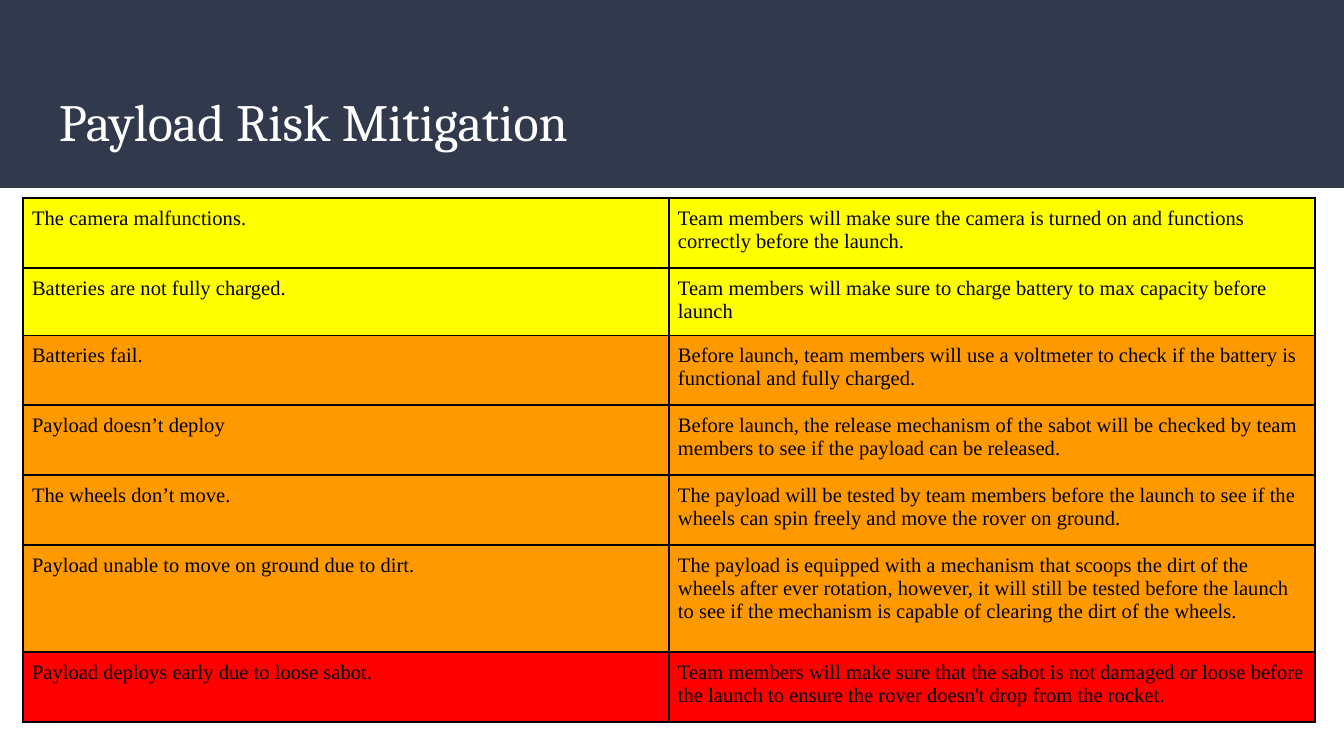
from dataclasses import dataclass

from lxml.etree import SubElement
from pptx import Presentation
from pptx.dml.color import RGBColor
from pptx.enum.shapes import MSO_SHAPE
from pptx.enum.text import MSO_ANCHOR
from pptx.oxml.ns import qn
from pptx.util import Emu, Pt

SLIDE_WIDTH, SLIDE_HEIGHT = 1344, 756
EMU_PER_PX = 9144000 / SLIDE_WIDTH


def px(length):
    return Emu(round(length * EMU_PER_PX))


@dataclass(frozen=True)
class Theme:
    band: str = "31394D"
    title: str = "FFFFFF"
    text: str = "000000"
    border: str = "000000"
    low: str = "FFFF00"
    medium: str = "FF9900"
    high: str = "FF0000"
    title_font: str = "Cambria"
    body_font: str = "Times New Roman"
    title_size: int = 28
    body_size: int = 11
    border_width: int = 1


class SlideBuilder:
    def __init__(self, slide, theme):
        self.slide = slide
        self.theme = theme

    def band(self, left, top, width, height):
        shape = self.slide.shapes.add_shape(
            MSO_SHAPE.RECTANGLE, px(left), px(top), px(width), px(height))
        shape.shadow.inherit = False
        shape.fill.solid()
        shape.fill.fore_color.rgb = RGBColor.from_string(self.theme.band)
        shape.line.fill.background()

    def run(self, paragraph, text, font, size, color):
        run = paragraph.add_run()
        run.text = text
        run.font.name = font
        run.font.size = Pt(size)
        run.font.color.rgb = RGBColor.from_string(color)

    def title(self, text, left, top, width, height, inset):
        shape = self.slide.shapes.add_textbox(px(left), px(top), px(width), px(height))
        frame = shape.text_frame
        frame.word_wrap = True
        frame.vertical_anchor = MSO_ANCHOR.BOTTOM
        frame.margin_left = frame.margin_right = px(inset)
        frame.margin_top = frame.margin_bottom = px(inset)
        self.run(frame.paragraphs[0], text, self.theme.title_font,
                 self.theme.title_size, self.theme.title)

    def borders(self, cell):
        properties = cell._tc.get_or_add_tcPr()
        for side in ("a:lnL", "a:lnR", "a:lnT", "a:lnB"):
            line = SubElement(properties, qn(side), w=str(Pt(self.theme.border_width)))
            fill = SubElement(line, qn("a:solidFill"))
            SubElement(fill, qn("a:srgbClr"), val=self.theme.border)

    def cell(self, cell, text, color, inset):
        cell.margin_left = cell.margin_right = px(inset)
        cell.margin_top = cell.margin_bottom = px(inset)
        self.borders(cell)
        cell.fill.solid()
        cell.fill.fore_color.rgb = RGBColor.from_string(color)
        self.run(cell.text_frame.paragraphs[0], text, self.theme.body_font,
                 self.theme.body_size, self.theme.text)

    def table(self, rows, left, top, column_width, inset):
        height = sum(row_height for row_height, *_ in rows)
        table = self.slide.shapes.add_table(
            len(rows), 2, px(left), px(top), px(2 * column_width), px(height)).table
        table.first_row = table.horz_banding = False
        for column in table.columns:
            column.width = px(column_width)
        for index, (row_height, color, *texts) in enumerate(rows):
            table.rows[index].height = px(row_height)
            for column, text in enumerate(texts):
                self.cell(table.cell(index, column), text, color, inset)


def main():
    presentation = Presentation()
    presentation.slide_width = px(SLIDE_WIDTH)
    presentation.slide_height = px(SLIDE_HEIGHT)
    slide = presentation.slides.add_slide(presentation.slide_layouts[6])
    theme = Theme()
    builder = SlideBuilder(slide, theme)

    # Header
    builder.band(0, 0, SLIDE_WIDTH, 188)
    builder.title("Payload Risk Mitigation", 46, 74, 1252, 91, inset=13)

    # Risks and mitigations: row height, severity colour, risk, mitigation
    risks = [
        (70, theme.low, "The camera malfunctions.",
         "Team members will make sure the camera is turned on and functions "
         "correctly before the launch."),
        (51, theme.low, "Batteries are not fully charged.",
         "Team members will make sure to charge battery to max capacity before launch"),
        (70, theme.medium, "Batteries fail.",
         "Before launch, team members will use a voltmeter to check if the battery "
         "is functional and fully charged."),
        (70, theme.medium, "Payload doesn’t deploy",
         "Before launch, the release mechanism of the sabot will be checked by team "
         "members to see if the payload can be released."),
        (70, theme.medium, "The wheels don’t move.",
         "The payload will be tested by team members before the launch to see if the "
         "wheels can spin freely and move the rover on ground."),
        (107, theme.medium, "Payload unable to move on ground due to dirt.",
         "The payload is equipped with a mechanism that scoops the dirt of the wheels "
         "after ever rotation, however, it will still be tested before the launch to "
         "see if the mechanism is capable of clearing the dirt of the wheels."),
        (70, theme.high, "Payload deploys early due to loose sabot.",
         "Team members will make sure that the sabot is not damaged or loose before "
         "the launch to ensure the rover doesn't drop from the rocket."),
    ]
    builder.table(risks, 23, 198, column_width=646, inset=9)

    presentation.save("out.pptx")


if __name__ == "__main__":
    main()
